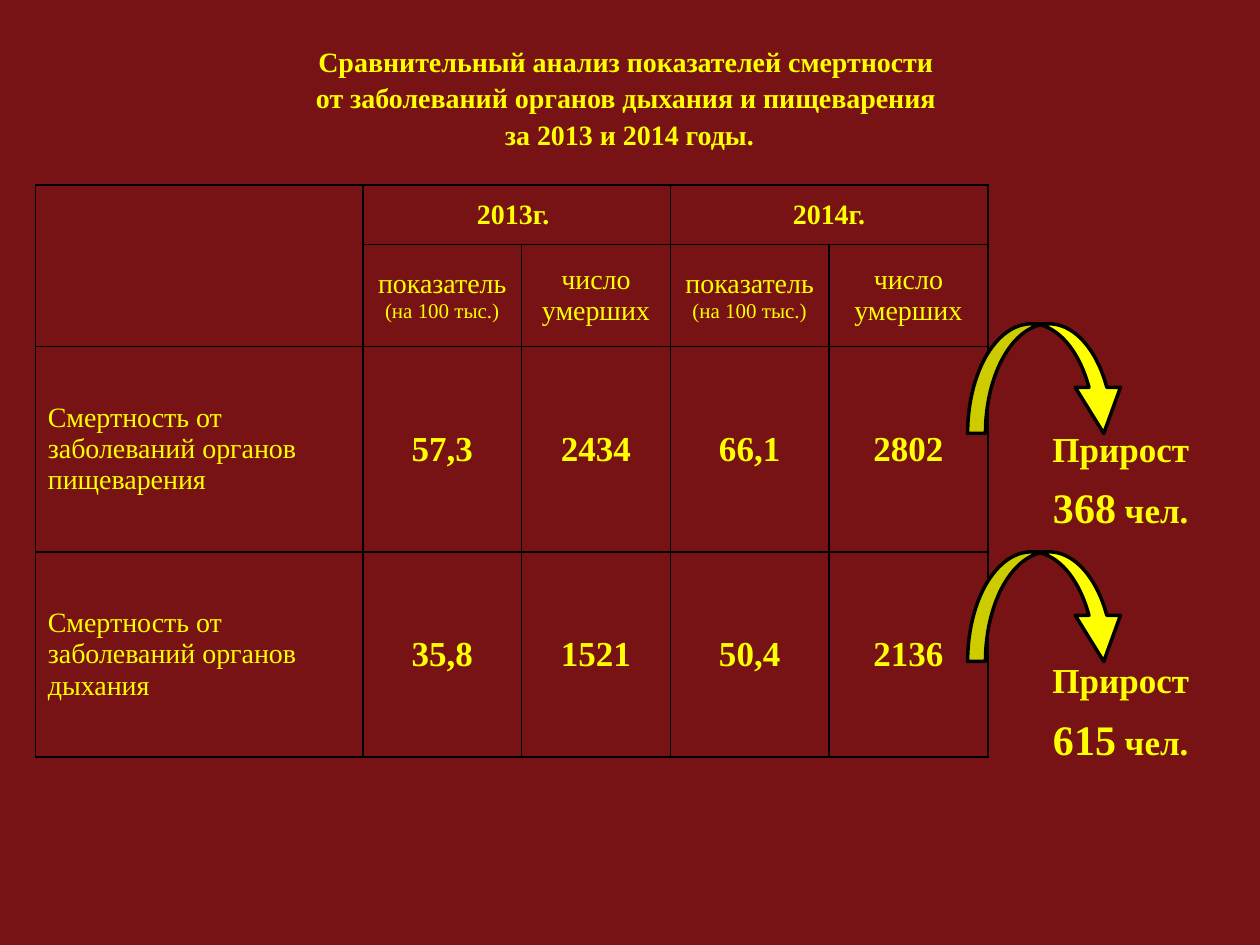
from dataclasses import dataclass

import pptx
import pptx.dml.color
import pptx.enum.shapes
import pptx.enum.text
import pptx.oxml
import pptx.oxml.ns
import pptx.util
from pptx.util import Inches

ALIGN = pptx.enum.text.PP_ALIGN
ANCHOR = pptx.enum.text.MSO_ANCHOR


@dataclass(frozen=True)
class Theme:
    font: str = "Times New Roman"
    background: str = "771315"
    accent: str = "FFFF00"
    outline: str = "000000"
    note: float = 12
    body: float = 16
    value: float = 20
    total: float = 24


THEME = Theme()


def color(value):
    return pptx.dml.color.RGBColor.from_string(value)


def format_runs(paragraph, size, bold=False, alignment=ALIGN.CENTER):
    paragraph.alignment = alignment
    for run in paragraph.runs:
        run.font.name = THEME.font
        run.font.size = pptx.util.Pt(size)
        run.font.bold = bold
        run.font.color.rgb = color(THEME.accent)


def add_text_frame(slide, left, top, width, height):
    shape = slide.shapes.add_textbox(
        Inches(left), Inches(top), Inches(width), Inches(height))
    text_frame = shape.text_frame
    text_frame.word_wrap = True
    text_frame.margin_top = text_frame.margin_bottom = 0
    return text_frame


def add_title(slide, left, top, width, height):
    text_frame = add_text_frame(slide, left, top, width, height)
    text_frame.vertical_anchor = ANCHOR.MIDDLE
    text_frame.text = (
        "Сравнительный анализ показателей смертности \v"
        "от заболеваний органов дыхания и пищеварения \v"
        "за 2013 и 2014 годы.")
    paragraph = text_frame.paragraphs[0]
    paragraph.line_spacing = 1.08
    format_runs(paragraph, THEME.body, bold=True)


def add_borders(cell):
    properties = cell._tc.get_or_add_tcPr()
    for position, side in enumerate(("lnL", "lnR", "lnT", "lnB")):
        border = pptx.oxml.parse_xml(
            f'<a:{side} {pptx.oxml.ns.nsdecls("a")} w="12700"><a:solidFill>'
            f'<a:srgbClr val="{THEME.outline}"/></a:solidFill></a:{side}>')
        properties.insert(position, border)


def set_cell(cell, text, sizes, bold=False, alignment=ALIGN.CENTER):
    cell.text_frame.text = text
    for paragraph, size in zip(cell.text_frame.paragraphs, sizes):
        format_runs(paragraph, size, bold, alignment)


def add_mortality_table(slide, left, top, width, height):
    column_widths = [2.6, 1.26, 1.18, 1.26, 1.26]
    row_heights = [0.47, 0.81, 1.63, 1.63]
    records = [
        ("Смертность от заболеваний органов пищеварения",
         "57,3", "2434", "66,1", "2802"),
        ("Смертность от заболеваний органов дыхания",
         "35,8", "1521", "50,4", "2136"),
    ]
    table = slide.shapes.add_table(
        len(row_heights), len(column_widths),
        Inches(left), Inches(top), Inches(width), Inches(height)).table
    table.first_row = table.horz_banding = False
    for column, column_width in zip(table.columns, column_widths):
        column.width = Inches(column_width)
    for row, row_height in zip(table.rows, row_heights):
        row.height = Inches(row_height)
    for cell in table.iter_cells():
        cell.fill.background()
        cell.vertical_anchor = ANCHOR.MIDDLE
        add_borders(cell)

    table.cell(0, 0).merge(table.cell(1, 0))
    for column, year in ((1, "2013г. "), (3, "2014г.")):
        table.cell(0, column).merge(table.cell(0, column + 1))
        set_cell(table.cell(0, column), year, [THEME.body], bold=True)
        set_cell(table.cell(1, column), "показатель\n(на 100 тыс.)",
                 [THEME.body, THEME.note])
        set_cell(table.cell(1, column + 1), "число умерших", [THEME.body])
    for row, (label, *values) in enumerate(records, start=2):
        set_cell(table.cell(row, 0), label, [THEME.body], alignment=ALIGN.LEFT)
        for column, value in enumerate(values, start=1):
            set_cell(table.cell(row, column), value, [THEME.value], bold=True)


def add_growth_label(slide, number, left, top, width, height):
    text_frame = add_text_frame(slide, left, top, width, height)
    text_frame.text = f"Прирост\n{number}"
    heading, total = text_frame.paragraphs
    total.add_run().text = " чел."
    total.space_before = pptx.util.Pt(7)
    for paragraph in (heading, total):
        format_runs(paragraph, THEME.value, bold=True)
    total.runs[0].font.size = pptx.util.Pt(THEME.total)


def add_growth_arrow(slide, left, top, width, height):
    arrow = slide.shapes.add_shape(
        pptx.enum.shapes.MSO_SHAPE.CURVED_DOWN_ARROW,
        Inches(left), Inches(top), Inches(width), Inches(height))
    arrow.shadow.inherit = False
    for index, adjustment in enumerate((0.163, 0.412, 0.42)):
        arrow.adjustments[index] = adjustment
    arrow.fill.solid()
    arrow.fill.fore_color.rgb = color(THEME.accent)
    arrow.line.color.rgb = color(THEME.outline)
    arrow.line.width = pptx.util.Pt(2)


def main():
    presentation = pptx.Presentation()
    presentation.slide_width = Inches(10)
    presentation.slide_height = Inches(7.5)
    slide = presentation.slides.add_slide(presentation.slide_layouts[6])
    slide.background.fill.solid()
    slide.background.fill.fore_color.rgb = color(THEME.background)

    add_title(slide, 0.27, 0.3, 9.45, 0.93)
    add_mortality_table(slide, 0.28, 1.47, 7.56, 4.54)
    for number, label_top, arrow_top in (("368", 3.39, 2.57),
                                         ("615", 5.23, 4.38)):
        add_growth_label(slide, number, 7.99, label_top, 1.81, 0.85)
        add_growth_arrow(slide, 7.68, arrow_top, 1.26, 0.87)
    presentation.save("out.pptx")


if __name__ == "__main__":
    main()
